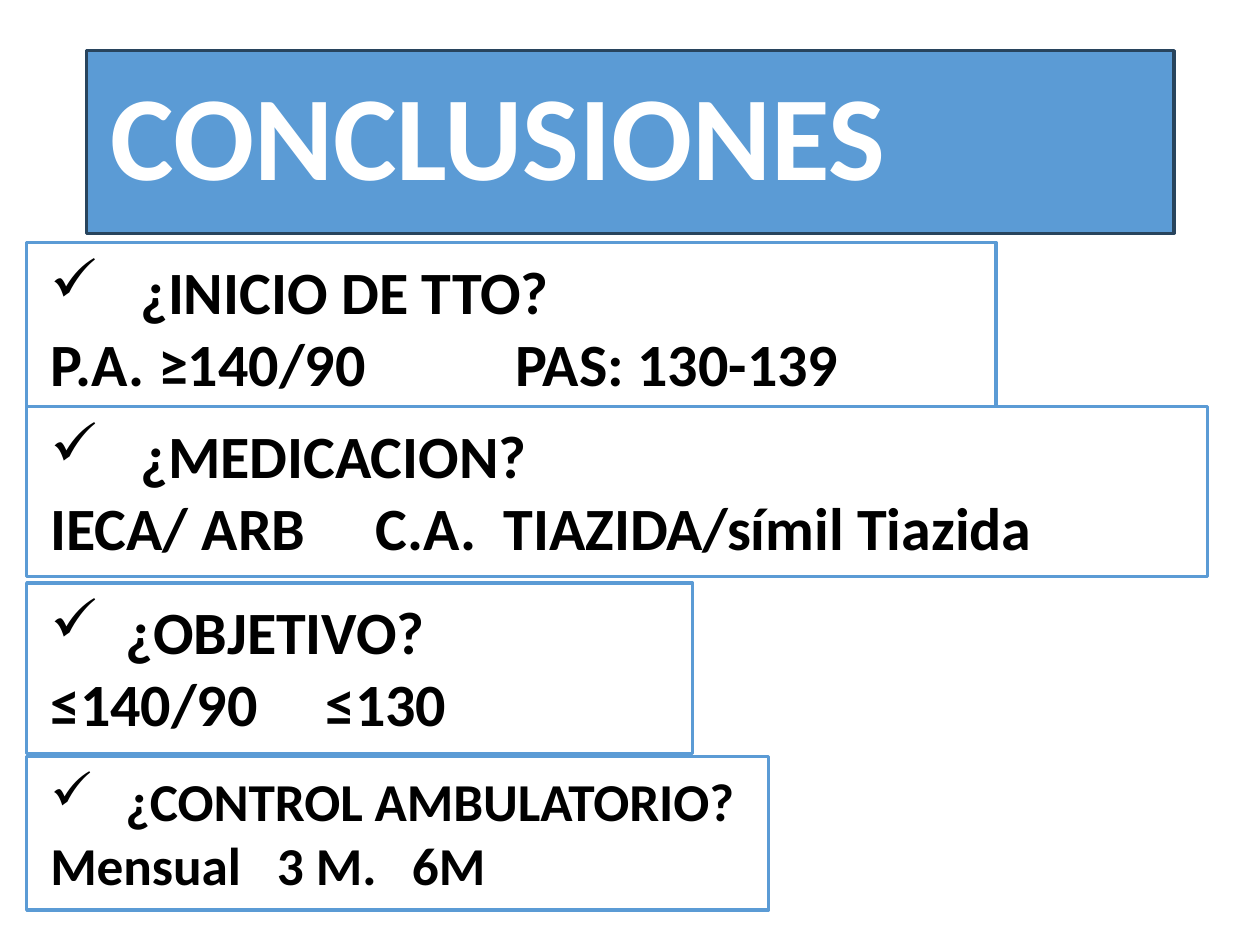
from pptx import Presentation
from pptx.dml.color import RGBColor
from pptx.enum.shapes import MSO_SHAPE
from pptx.enum.text import MSO_ANCHOR, MSO_AUTO_SIZE, PP_ALIGN
from pptx.oxml.ns import qn
from pptx.util import Pt
from lxml.etree import SubElement

BLUE = RGBColor(0x5B, 0x9B, 0xD5)
NAVY = RGBColor(0x28, 0x44, 0x5D)
WHITE = RGBColor(0xFF, 0xFF, 0xFF)
BLACK = RGBColor(0, 0, 0)


def write(par, text, size=18, color=BLACK, align=PP_ALIGN.LEFT, space=None,
          check=0, tabs=()):
    par.alignment = align
    if space:
        par.line_spacing = space
    props = par._p.get_or_add_pPr()
    if check:
        props.set("marL", str(Pt(check)))
        props.set("indent", str(Pt(-check)))
        SubElement(props, qn("a:buChar"), char="✓")
    if tabs:
        stops = SubElement(props, qn("a:tabLst"))
        for stop in tabs:
            SubElement(stops, qn("a:tab"), pos=str(Pt(stop)), algn="l")
    run = par.add_run()
    run.text = text
    font = run.font
    font.name, font.size, font.bold = "Calibri", Pt(size), True
    font.color.rgb = color


class Deck:
    """Holds the style and the current slide."""

    def __init__(self, wide, high):
        self.show = Presentation()
        self.show.slide_width, self.show.slide_height = Pt(wide), Pt(high)
        self.slide = self.show.slides.add_slide(self.show.slide_layouts[5])

    def paint(self, shape, fill, line):
        shape.fill.solid()
        shape.fill.fore_color.rgb = fill
        shape.line.color.rgb = line
        shape.line.width = Pt(1)

    def title(self, text, left, top, wide, high):
        shape = self.slide.shapes.title
        shape.left, shape.top = Pt(left), Pt(top)
        shape.width, shape.height = Pt(wide), Pt(high)
        self.paint(shape, BLUE, NAVY)
        frame = shape.text_frame
        frame.auto_size = MSO_AUTO_SIZE.NONE
        frame.vertical_anchor = MSO_ANCHOR.MIDDLE
        write(frame.paragraphs[0], text, size=36, color=WHITE, space=0.9)

    def box(self, head, body, top, wide, high=51.1, size=18, check=27,
            tabs=(), align=PP_ALIGN.LEFT):
        shape = self.slide.shapes.add_shape(
            MSO_SHAPE.RECTANGLE, Pt(8), Pt(top), Pt(wide), Pt(high))
        shape.shadow.inherit = False
        self.paint(shape, WHITE, BLUE)
        frame = shape.text_frame
        frame.word_wrap = True
        frame.auto_size = MSO_AUTO_SIZE.SHAPE_TO_FIT_TEXT
        frame.vertical_anchor = MSO_ANCHOR.TOP
        write(frame.paragraphs[0], head, size=size, check=check)
        write(frame.add_paragraph(), body, size=size, tabs=tabs, align=align)


def main():
    deck = Deck(378, 283.5)
    deck.title("CONCLUSIONES", 26, 15.2, 326.2, 54.8)
    deck.box("¿INICIO DE TTO?", "P.A. ≥140/90\tPAS: 130-139", 72.7, 290.9,
             tabs=[139.5], align=PP_ALIGN.JUSTIFY)
    deck.box("¿MEDICACION?", "IECA/ ARB\tC.A.\tTIAZIDA/símil Tiazida",
             121.9, 354.3, tabs=[97.5, 136])
    deck.box("¿OBJETIVO?", "≤140/90\t≤130", 174.9, 199.8, check=22.5,
             tabs=[82.5])
    deck.box("¿CONTROL AMBULATORIO?", "Mensual\t3 M.\t6M", 227, 222.6,
             high=46.1, size=16, check=22.5, tabs=[68, 108.5])
    deck.show.save("out.pptx")


if __name__ == "__main__":
    main()
